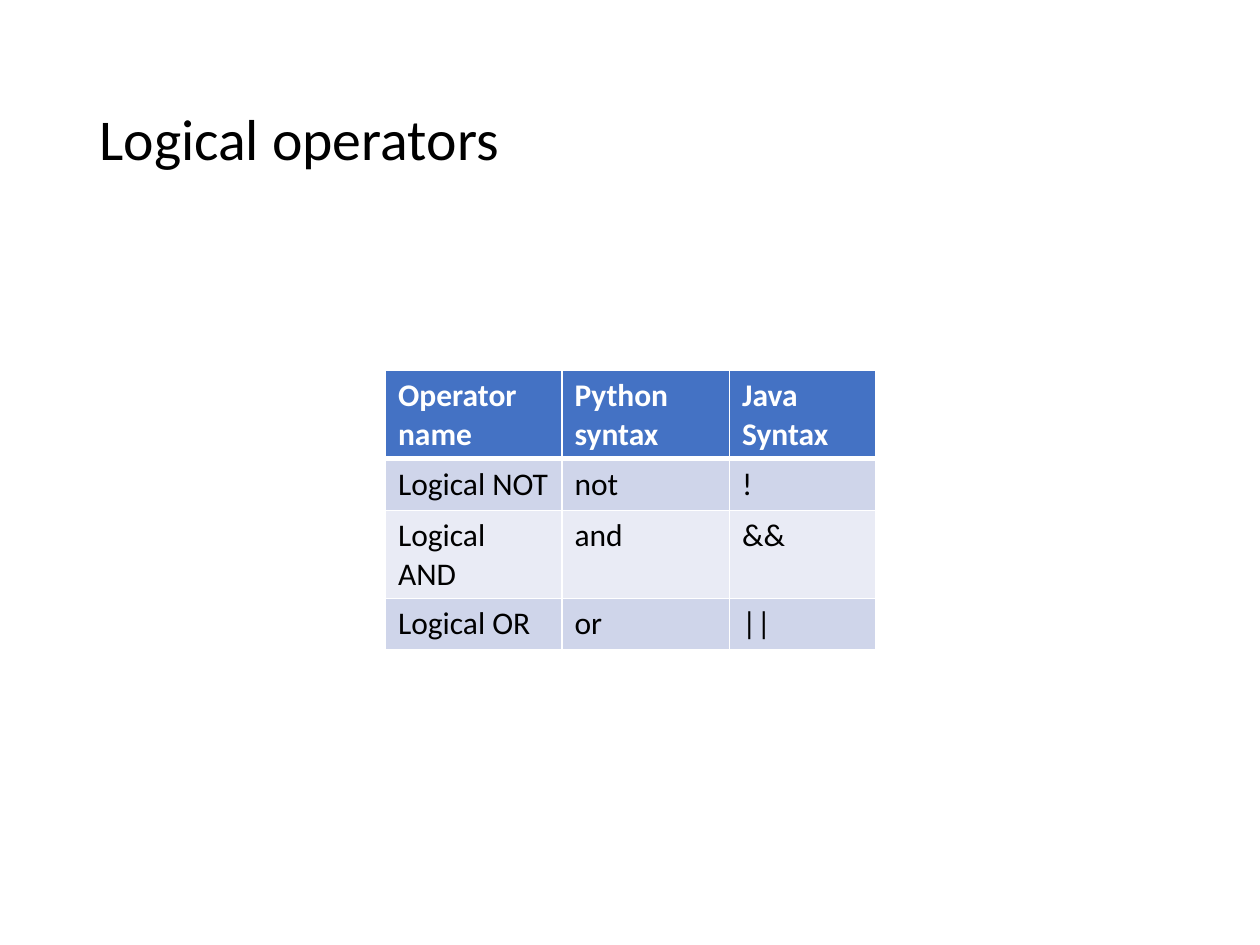
from dataclasses import dataclass

from lxml.etree import SubElement
from pptx import Presentation
from pptx.dml.color import RGBColor
from pptx.enum.text import MSO_ANCHOR
from pptx.oxml.ns import qn
from pptx.util import Inches, Pt


@dataclass(frozen=True)
class Theme:
    font: str = "Calibri"
    title_size: int = 33
    table_size: int = 18
    text: str = "000000"
    light: str = "FFFFFF"
    header: str = "4472C4"
    bands: tuple = ("CFD5EA", "E9EBF5")
    thin_border: int = 1
    header_border: int = 3


THEME = Theme()
COLUMN_WIDTHS = (1.4, 1.33, 1.16)
ROW_HEIGHT = 0.41
OPERATORS = (
    ("Operator name", "Python syntax", "Java Syntax"),
    ("Logical NOT", "not", "!"),
    ("Logical AND", "and", "&&"),
    ("Logical OR", "or", "||"),
)


def write_text(frame, text, color, **formats):
    para = frame.paragraphs[0]
    span = para.add_run()
    span.text = text
    for name, value in {"name": THEME.font, **formats}.items():
        setattr(span.font, name, value)
    span.font.color.rgb = RGBColor.from_string(color)
    return para


def set_borders(cell, widths):
    """Draw cell borders; call before filling, as the schema puts lines first."""
    properties = cell._tc.get_or_add_tcPr()
    for side, width in widths.items():
        line = SubElement(properties, qn(f"a:ln{side}"), w=str(Pt(width)))
        fill = SubElement(line, qn("a:solidFill"))
        SubElement(fill, qn("a:srgbClr"), val=THEME.light)


def add_title(page, left, top, width, height, text):
    box = page.shapes.add_textbox(left, top, width, height)
    frame = box.text_frame
    frame.word_wrap = True
    frame.vertical_anchor = MSO_ANCHOR.MIDDLE
    para = write_text(frame, text, THEME.text, size=Pt(THEME.title_size))
    para.line_spacing = 0.9


def add_operator_table(page, left, top, width, height):
    shape = page.shapes.add_table(
        len(OPERATORS), len(COLUMN_WIDTHS), left, top, width, height
    )
    table = shape.table
    for column, column_width in zip(table.columns, COLUMN_WIDTHS):
        column.width = Inches(column_width)
    for row_index, texts in enumerate(OPERATORS):
        table.rows[row_index].height = Inches(ROW_HEIGHT)
        is_header = row_index == 0
        background = THEME.header if is_header else THEME.bands[(row_index - 1) % 2]
        color = THEME.light if is_header else THEME.text
        borders = dict.fromkeys("LRTB", THEME.thin_border)
        if is_header:
            borders["B"] = THEME.header_border
        elif row_index == 1:
            borders["T"] = THEME.header_border
        for column_index, text in enumerate(texts):
            cell = table.cell(row_index, column_index)
            set_borders(cell, borders)
            cell.fill.solid()
            cell.fill.fore_color.rgb = RGBColor.from_string(background)
            write_text(
                cell.text_frame, text, color,
                size=Pt(THEME.table_size), bold=is_header,
            )


def main():
    deck = Presentation()
    deck.slide_width, deck.slide_height = Inches(10), Inches(7.5)
    page = deck.slides.add_slide(deck.slide_layouts[6])
    add_title(
        page, Inches(0.69), Inches(0.4), Inches(8.62), Inches(1.45),
        "Logical operators",
    )
    add_operator_table(
        page, Inches(3.06), Inches(2.94),
        Inches(sum(COLUMN_WIDTHS)), Inches(ROW_HEIGHT * len(OPERATORS)),
    )
    deck.save("out.pptx")


if __name__ == "__main__":
    main()
